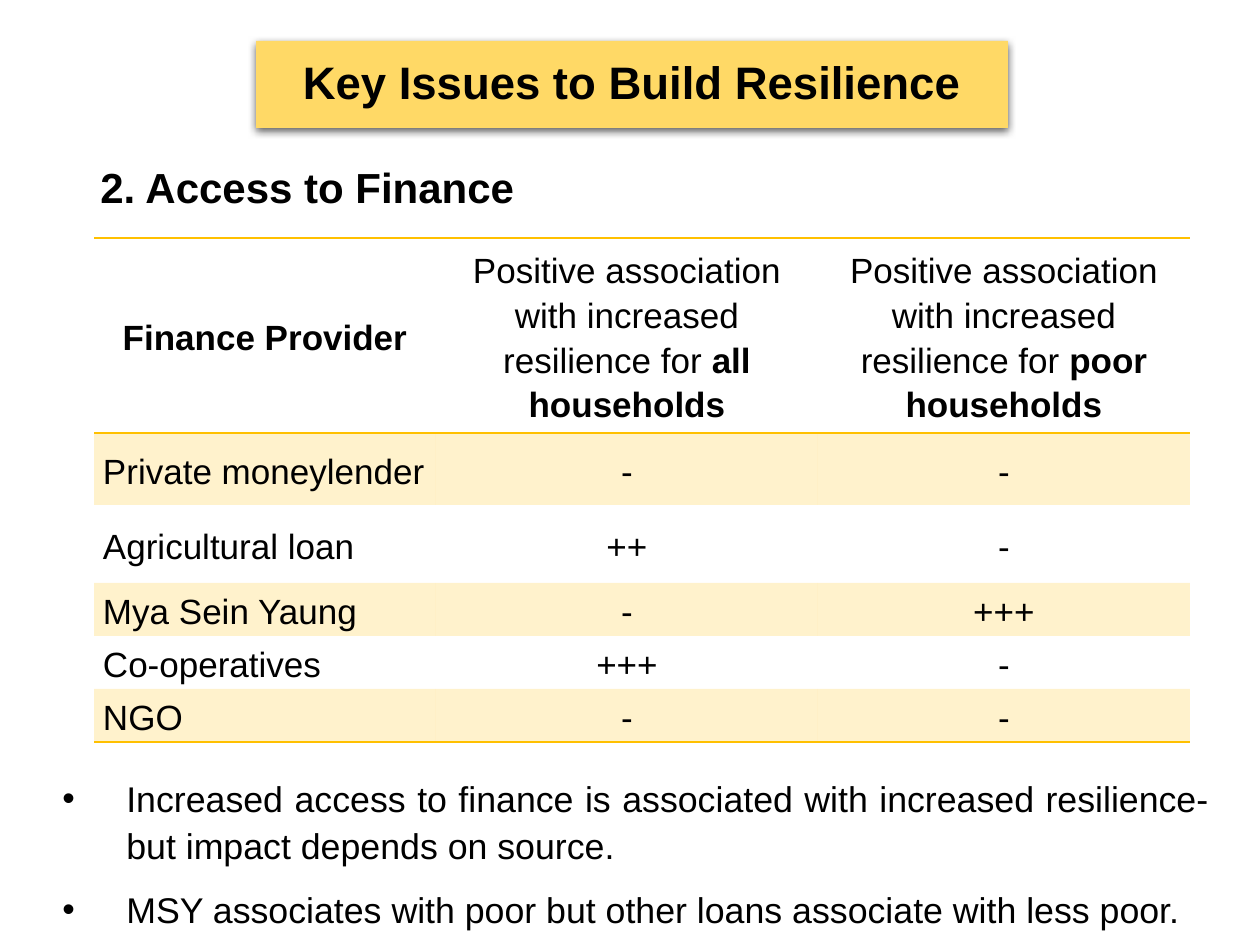
from dataclasses import dataclass

from lxml import etree
from pptx import Presentation
from pptx.dml.color import RGBColor
from pptx.enum.shapes import MSO_SHAPE
from pptx.enum.text import MSO_ANCHOR, PP_ALIGN
from pptx.oxml import parse_xml
from pptx.oxml.ns import nsdecls, qn
from pptx.util import Emu, Pt

RECTANGLE = MSO_SHAPE.RECTANGLE
MIDDLE = MSO_ANCHOR.MIDDLE
LEFT, CENTER, JUSTIFY = PP_ALIGN.LEFT, PP_ALIGN.CENTER, PP_ALIGN.JUSTIFY
PX_PER_INCH = 126
NO_STYLE_NO_GRID = "{2D5ABB26-0587-4C30-8999-92F81FD0307C}"


def px(length):
    return Emu(round(length * 914400 / PX_PER_INCH))


@dataclass(frozen=True)
class Theme:
    font: str = "Arial"
    text: str = "000000"
    banner: str = "FFD966"
    accent: str = "FFC000"
    band_opacity: int = 20
    title_size: float = 26
    heading_size: float = 24
    bullet_size: float = 20.4
    table_size: float = 20


class SlideBuilder:
    def __init__(self, slide, theme):
        self.slide = slide
        self.theme = theme

    def add_runs(self, paragraph, runs, size, align=LEFT, spacing=1.0):
        """Add (text, bold) runs to a paragraph."""
        paragraph.alignment = align
        paragraph.line_spacing = spacing
        for text, bold in runs:
            run = paragraph.add_run()
            run.text = text
            run.font.name = self.theme.font
            run.font.size = Pt(size)
            run.font.bold = bold
            run.font.color.rgb = RGBColor.from_string(self.theme.text)

    def text_frame(self, left, top, width, height):
        box = self.slide.shapes.add_textbox(px(left), px(top), px(width), px(height))
        box.text_frame.word_wrap = True
        return box.text_frame

    def banner(self, left, top, width, height, text):
        shape = self.slide.shapes.add_shape(
            RECTANGLE, px(left), px(top), px(width), px(height))
        shape.fill.solid()
        shape.fill.fore_color.rgb = RGBColor.from_string(self.theme.banner)
        shape.line.fill.background()
        shape.shadow.inherit = False
        effects = shape._element.spPr.find(qn("a:effectLst"))
        effects.append(parse_xml(
            f'<a:outerShdw {nsdecls("a")} blurRad="{Pt(4.5)}" dist="{Pt(1.5)}" '
            'dir="5400000" algn="ctr" rotWithShape="0"><a:srgbClr val="000000">'
            '<a:alpha val="63000"/></a:srgbClr></a:outerShdw>'))
        shape.text_frame.word_wrap = True
        shape.text_frame.vertical_anchor = MIDDLE
        self.add_runs(shape.text_frame.paragraphs[0], [(text, True)],
                      self.theme.title_size, CENTER, 0.9)

    def heading(self, left, top, width, height, text):
        frame = self.text_frame(left, top, width, height)
        self.add_runs(frame.paragraphs[0], [(text, True)],
                      self.theme.heading_size, spacing=0.9)

    def bullets(self, left, top, width, height, items, indent):
        frame = self.text_frame(left, top, width, height)
        for index, item in enumerate(items):
            paragraph = frame.add_paragraph() if index else frame.paragraphs[0]
            properties = paragraph._p.get_or_add_pPr()
            properties.set("marL", str(px(indent)))
            properties.set("indent", str(-px(indent)))
            etree.SubElement(properties, qn("a:buFont"), typeface=self.theme.font)
            etree.SubElement(properties, qn("a:buChar"), char="•")
            if index:
                paragraph.space_before = Pt(10)
            self.add_runs(paragraph, [(item, False)], self.theme.bullet_size, JUSTIFY, 1.1)

    def cell_borders(self, cell, ruled_sides):
        properties = cell._tc.get_or_add_tcPr()
        for side in ruled_sides:
            properties.append(parse_xml(
                f'<a:ln{side} {nsdecls("a")} w="{Pt(1)}"><a:solidFill>'
                f'<a:srgbClr val="{self.theme.accent}"/></a:solidFill></a:ln{side}>'))

    def cell_fill(self, cell, banded):
        if not banded:
            cell.fill.background()
            return
        cell.fill.solid()
        cell.fill.fore_color.rgb = RGBColor.from_string(self.theme.accent)
        color = cell._tc.tcPr.find(qn("a:solidFill")).find(qn("a:srgbClr"))
        etree.SubElement(color, qn("a:alpha"), val=str(self.theme.band_opacity * 1000))

    def table(self, left, top, widths, heights, rows):
        """Rows hold cells, and each cell is a list of (text, bold) runs."""
        frame = self.slide.shapes.add_table(
            len(heights), len(widths), px(left), px(top), px(sum(widths)), px(sum(heights)))
        table = frame.table
        table.first_row = table.horz_banding = False
        table._tbl.tblPr.find(qn("a:tableStyleId")).text = NO_STYLE_NO_GRID
        for column, width in zip(table.columns, widths):
            column.width = px(width)
        for row, height in zip(table.rows, heights):
            row.height = px(height)
        last_row = len(rows) - 1
        for row_index, row in enumerate(rows):
            ruled_sides = {0: "TB", last_row: "B"}.get(row_index, "")
            for column_index, runs in enumerate(row):
                cell = table.cell(row_index, column_index)
                cell.vertical_anchor = MIDDLE
                cell.margin_left = cell.margin_right = px(9)
                cell.margin_top = cell.margin_bottom = 0
                self.cell_borders(cell, ruled_sides)
                self.cell_fill(cell, row_index % 2 == 1)
                align = CENTER if row_index == 0 or column_index else LEFT
                self.add_runs(cell.text_frame.paragraphs[0], runs,
                              self.theme.table_size, align, 1.15)


ASSOCIATION = "Positive association with increased resilience for "
HEADER = [
    [("Finance Provider", True)],
    [(ASSOCIATION, False), ("all households", True)],
    [(ASSOCIATION, False), ("poor households", True)],
]
PROVIDERS = [
    ("Private moneylender", "-", "-"),
    ("Agricultural loan", "++", "-"),
    ("Mya Sein Yaung", "-", "+++"),
    ("Co-operatives", "+++", "-"),
    ("NGO", "-", "-"),
]
FINDINGS = [
    "Increased access to finance is associated with increased resilience-"
    "but impact depends on source.",
    "MSY associates with poor but other loans associate with less poor.",
]


def main():
    presentation = Presentation()
    presentation.slide_width, presentation.slide_height = px(1260), px(945)
    slide = presentation.slides.add_slide(presentation.slide_layouts[6])
    builder = SlideBuilder(slide, Theme())
    builder.heading(88, 161, 1086, 64, "2. Access to Finance")
    builder.banner(256, 41, 752, 87, "Key Issues to Build Resilience")
    builder.bullets(50, 766, 1171, 169, FINDINGS, indent=64)
    body = [[[(text, False)] for text in provider] for provider in PROVIDERS]
    builder.table(94, 238, [342, 382, 372], [195, 72, 78, 53, 53, 53], [HEADER] + body)
    presentation.save("out.pptx")


if __name__ == "__main__":
    main()
